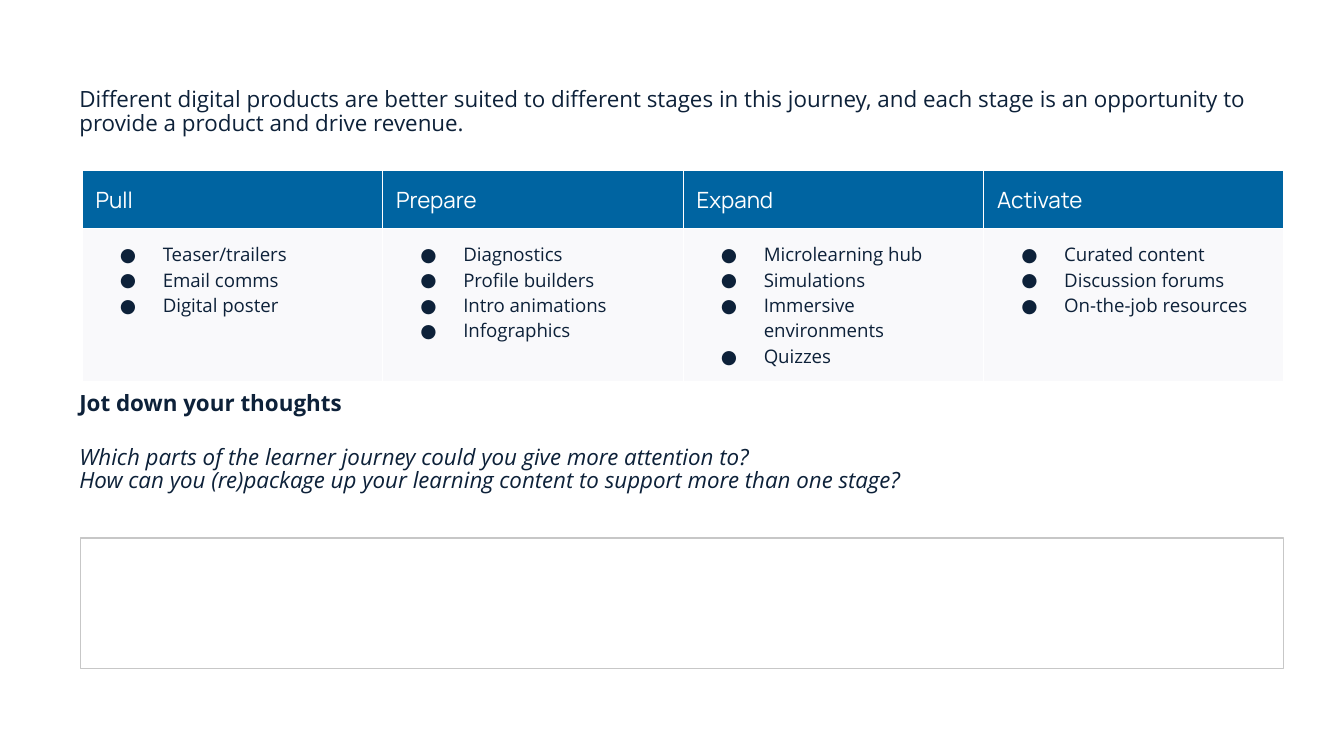
from lxml.etree import SubElement
from pptx import Presentation
from pptx.dml.color import RGBColor
from pptx.enum.shapes import MSO_SHAPE
from pptx.enum.text import MSO_ANCHOR, MSO_AUTO_SIZE
from pptx.oxml import parse_xml
from pptx.oxml.ns import nsdecls, qn
from pptx.util import Pt

NAVY, BLUE, PALE, WHITE, GREY = "0D2139", "0064A1", "F9F9FB", "FFFFFF", "C7C7C7"

STAGES = {
    "Pull": ["Teaser/trailers", "Email comms", "Digital poster"],
    "Prepare": ["Diagnostics", "Profile builders", "Intro animations", "Infographics"],
    "Expand": ["Microlearning hub", "Simulations", "Immersive environments", "Quizzes"],
    "Activate": ["Curated content", "Discussion forums", "On-the-job resources"],
}

PASSAGES = [
    ("Different digital products are better suited to different stages in this journey, "
     "and each stage is an opportunity to provide a product and drive revenue.", 0, {}),
    ("Jot down your thoughts", 137.5, {"bold": True}),
    ("Which parts of the learner journey could you give more attention to?\v"
     "How can you (re)package up your learning content to support more than one stage?",
     16, {"italic": True}),
]


def color(value):
    """Turn a hex string into a colour."""
    return RGBColor.from_string(value)


class SlideBuilder:
    """Hold the text style and the current slide, and draw each kind of element."""

    margins = {f"margin_{side}": Pt(7.2) for side in ("left", "top", "right", "bottom")}

    def __init__(self, slide):
        """Keep the slide and remove its unused title."""
        self.slide = slide
        title = slide.shapes.title.element
        title.getparent().remove(title)

    def apply(self, target, values):
        """Set every attribute named in the values."""
        for name, value in values.items():
            setattr(target, name, value)

    def style(self, para, size, font="Open Sans", fill=NAVY, **extra):
        """Format all the spans of a paragraph."""
        for span in para.runs:
            self.apply(span.font, {"size": Pt(size), "name": font, **extra})
            span.font.color.rgb = color(fill)

    def body(self, left, top, width, height, passages):
        """Place the body placeholder and write the passages in it."""
        box = self.slide.placeholders[1]
        self.apply(box, {"left": Pt(left), "top": Pt(top),
                         "width": Pt(width), "height": Pt(height)})
        frame = box.text_frame
        self.apply(frame, {**self.margins, "word_wrap": True,
                           "auto_size": MSO_AUTO_SIZE.NONE,
                           "vertical_anchor": MSO_ANCHOR.TOP})
        for index, (text, gap, extra) in enumerate(passages):
            para = frame.add_paragraph() if index else frame.paragraphs[0]
            para.text = text
            properties = para._p.get_or_add_pPr()
            self.apply_indent(properties, 0, 0)
            SubElement(properties, qn("a:buNone"))
            self.apply(para, {"space_before": Pt(gap), "space_after": Pt(0),
                              "line_spacing": 0.88})
            self.style(para, 12, **extra)

    def apply_indent(self, properties, margin, indent):
        """Set the left margin and first-line indent of a paragraph."""
        properties.set("marL", str(Pt(margin)))
        properties.set("indent", str(Pt(indent)))

    def bullet(self, para):
        """Give a paragraph a round bullet and a hanging indent."""
        properties = para._p.get_or_add_pPr()
        self.apply_indent(properties, 36, -23)
        bullet_color = SubElement(properties, qn("a:buClr"))
        SubElement(bullet_color, qn("a:srgbClr")).set("val", NAVY)
        SubElement(properties, qn("a:buFont")).set("typeface", "Open Sans")
        SubElement(properties, qn("a:buChar")).set("char", "●")

    def cell(self, cell, lines, fill):
        """Write lines in a cell and set its fill, margins and borders."""
        self.apply(cell, {**self.margins, "text": "\n".join(lines)})
        cell.fill.solid()
        cell.fill.fore_color.rgb = color(fill)
        properties = cell._tc.get_or_add_tcPr()
        for index, side in enumerate("LRTB"):
            properties.insert(index, parse_xml(
                f'<a:ln{side} {nsdecls("a")} w="{Pt(0.75)}"><a:solidFill>'
                f'<a:srgbClr val="{WHITE}"/></a:solidFill></a:ln{side}>'))

    def table(self, left, top, column_width, heights, stages):
        """Draw one column per stage, with a header and a bulleted list."""
        width = column_width * len(stages)
        table = self.slide.shapes.add_table(
            2, len(stages), Pt(left), Pt(top), Pt(width), Pt(sum(heights))).table
        for row, height in zip(table.rows, heights):
            row.height = Pt(height)
        for index, (stage, products) in enumerate(stages.items()):
            table.columns[index].width = Pt(column_width)
            header, content = table.cell(0, index), table.cell(1, index)
            self.cell(header, [stage], BLUE)
            self.style(header.text_frame.paragraphs[0], 12, "Manrope", WHITE, bold=False)
            self.cell(content, products, PALE)
            for para in content.text_frame.paragraphs:
                self.bullet(para)
                self.style(para, 10)

    def answer_box(self, left, top, width, height):
        """Draw an outlined rectangle to write in."""
        box = self.slide.shapes.add_shape(
            MSO_SHAPE.RECTANGLE, Pt(left), Pt(top), Pt(width), Pt(height))
        box.shadow.inherit = False
        box.fill.solid()
        box.fill.fore_color.rgb = color(WHITE)
        box.line.color.rgb = color(GREY)
        box.line.width = Pt(0.75)


def main():
    """Build the slide and save the deck."""
    deck = Presentation()
    deck.slide_width, deck.slide_height = Pt(720), Pt(405)
    page = SlideBuilder(deck.slides.add_slide(deck.slide_layouts[1]))
    page.body(35.3, 40.3, 653, 255, PASSAGES)
    page.table(44, 91.5, 161, [30.6, 82], STAGES)
    page.answer_box(43.2, 288.3, 644.4, 69.8)
    deck.save("out.pptx")


if __name__ == "__main__":
    main()
